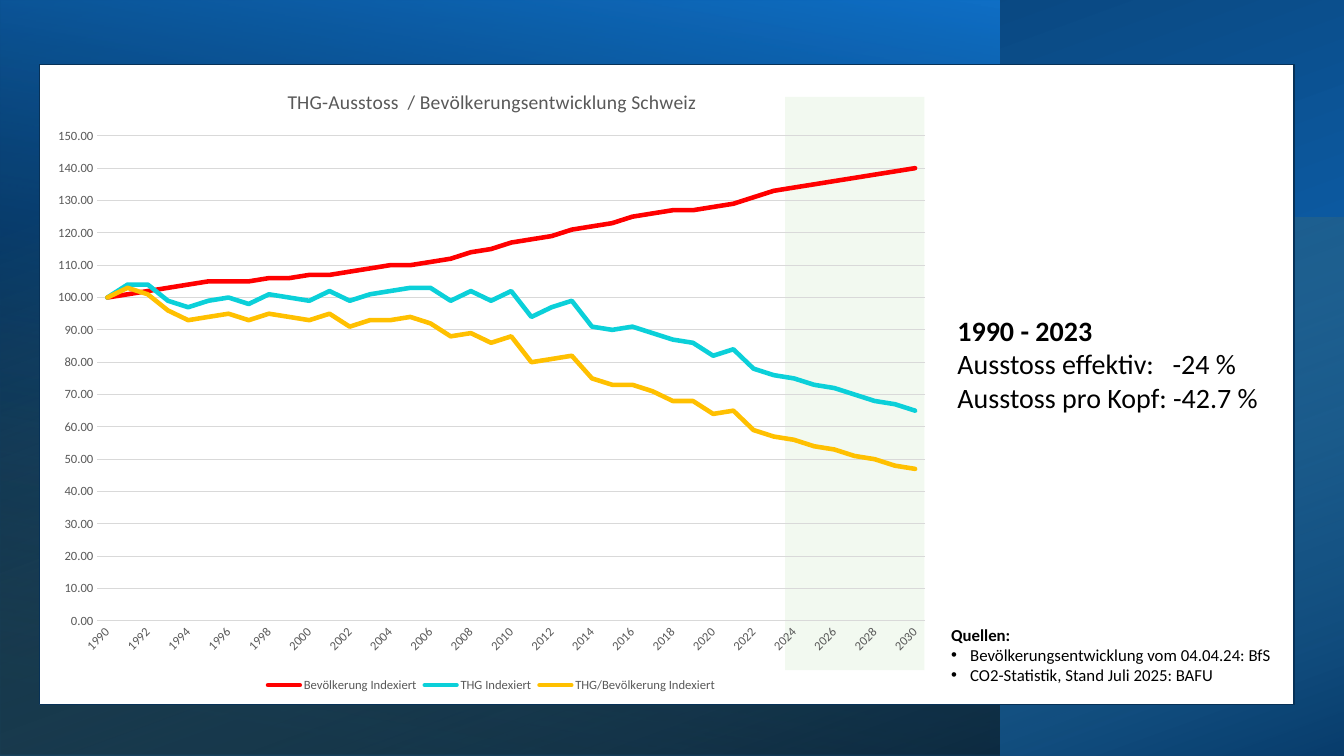
import lxml.etree
import pptx
import pptx.chart.data
import pptx.dml.color
import pptx.enum.chart
import pptx.enum.shapes
import pptx.enum.text
import pptx.oxml.ns
import pptx.util

Cm = pptx.util.Cm
Pt = pptx.util.Pt
qn = pptx.oxml.ns.qn
COLORS = {
    "blue": "0F6FC6", "navy": "083763", "black": "000000", "mint": "B0DFA1",
    "white": "FFFFFF", "edge": "073157", "pale": "E5F4E0", "grey": "595959",
    "grid": "D9D9D9", "red": "FF0000", "cyan": "0BD0D9", "gold": "FFC000",
}
YEARS = [str(year) for year in range(1990, 2031)]
SERIES = [
    ("Bevölkerung Indexiert", "red",
     [100, 101, 102, 103, 104, 105, 105, 105, 106, 106, 107, 107, 108, 109,
      110, 110, 111, 112, 114, 115, 117, 118, 119, 121, 122, 123, 125, 126,
      127, 127, 128, 129, 131, 133, 134, 135, 136, 137, 138, 139, 140]),
    ("THG Indexiert", "cyan",
     [100, 104, 104, 99, 97, 99, 100, 98, 101, 100, 99, 102, 99, 101,
      102, 103, 103, 99, 102, 99, 102, 94, 97, 99, 91, 90, 91, 89,
      87, 86, 82, 84, 78, 76, 75, 73, 72, 70, 68, 67, 65]),
    ("THG/Bevölkerung Indexiert", "gold",
     [100, 103, 101, 96, 93, 94, 95, 93, 95, 94, 93, 95, 91, 93,
      93, 94, 92, 88, 89, 86, 88, 80, 81, 82, 75, 73, 73, 71,
      68, 68, 64, 65, 59, 57, 56, 54, 53, 51, 50, 48, 47]),
]


def shade(name):
    """Return the named colour."""
    return pptx.dml.color.RGBColor.from_string(COLORS[name])


def style(font, size, color="black", bold=False):
    """Format a font."""
    font.name = "Calibri"
    font.size = Pt(size)
    font.bold = bold
    font.color.rgb = shade(color)


def write(par, text, bullet=False, tab=None, **form):
    """Write formatted text into a paragraph."""
    props = par._p.get_or_add_pPr()
    if bullet:
        props.set("marL", str(Cm(0.48)))
        props.set("indent", str(-Cm(0.48)))
        lxml.etree.SubElement(props, qn("a:buFont")).set("typeface", "Arial")
        lxml.etree.SubElement(props, qn("a:buChar")).set("char", "•")
    if tab:
        stops = lxml.etree.SubElement(props, qn("a:tabLst"))
        stop = lxml.etree.SubElement(stops, qn("a:tab"))
        stop.set("pos", str(Cm(tab)))
        stop.set("algn", "l")
    run = par.add_run()
    run.text = text
    style(run.font, **form)


def fade(node, alpha):
    """Set the opacity of a colour node in percent."""
    color = node.find(qn("a:srgbClr"))
    lxml.etree.SubElement(color, qn("a:alpha")).set("val", str(alpha * 1000))


def clear(part):
    """Return shape properties without fill and line."""
    props = part.makeelement(qn("c:spPr"), {})
    lxml.etree.SubElement(props, qn("a:noFill"))
    line = lxml.etree.SubElement(props, qn("a:ln"))
    lxml.etree.SubElement(line, qn("a:noFill"))
    return props


def place(part, inner=False, **spots):
    """Give a chart part a fixed layout in fractions of the chart."""
    for old in part.findall(qn("c:layout")):
        part.remove(old)
    layout = part.makeelement(qn("c:layout"), {})
    text = part.find(qn("c:tx"))
    if text is None:
        part.insert(0, layout)
    else:
        text.addnext(layout)
    manual = lxml.etree.SubElement(layout, qn("c:manualLayout"))
    items = {"layoutTarget": "inner"} if inner else {}
    items.update(xMode="edge", yMode="edge", **spots)
    for key, value in items.items():
        lxml.etree.SubElement(manual, qn("c:" + key)).set("val", str(value))


class Deck:
    """Hold the style and the current slide."""

    def __init__(self):
        """Start a deck with one blank slide."""
        self.file = pptx.Presentation()
        self.file.slide_width = Cm(33.87)
        self.file.slide_height = Cm(19.05)
        self.slide = self.file.slides.add_slide(self.file.slide_layouts[6])

    def rect(self, *box):
        """Add a plain rectangle without a line."""
        shape = self.slide.shapes.add_shape(
            pptx.enum.shapes.MSO_SHAPE.RECTANGLE, *map(Cm, box))
        shape.shadow.inherit = False
        shape.line.fill.background()
        return shape

    def blend(self, box, turn, angle, stops):
        """Add a mirrored rectangle with a gradient fill."""
        shape = self.rect(*box)
        shape.rotation = turn
        shape._element.spPr.find(qn("a:xfrm")).set("flipH", "1")
        shape.fill.gradient()
        shape.fill.gradient_angle = 360 - angle
        for stop, (spot, color, alpha) in zip(shape.fill.gradient_stops, stops):
            stop.position = spot
            stop.color.rgb = shade(color)
            if alpha < 100:
                fade(stop._gs, alpha)

    def panel(self, box, color, edge=None, alpha=100):
        """Add a rectangle with a flat fill."""
        shape = self.rect(*box)
        shape.fill.solid()
        shape.fill.fore_color.rgb = shade(color)
        if alpha < 100:
            fade(shape._element.spPr.find(qn("a:solidFill")), alpha)
        if edge:
            shape.line.color.rgb = shade(edge)
            shape.line.width = Pt(1)

    def note(self, box, size, lines):
        """Add a text box of formatted lines."""
        frame = self.slide.shapes.add_textbox(*map(Cm, box)).text_frame
        frame.word_wrap = False
        frame.auto_size = pptx.enum.text.MSO_AUTO_SIZE.SHAPE_TO_FIT_TEXT
        for index, (text, form) in enumerate(lines):
            par = frame.add_paragraph() if index else frame.paragraphs[0]
            write(par, text, size=size, **form)

    def graph(self, box, title):
        """Add the line chart."""
        data = pptx.chart.data.CategoryChartData(number_format="0.00")
        data.categories = YEARS
        for name, _, values in SERIES:
            data.add_series(name, values)
        chart = self.slide.shapes.add_chart(
            pptx.enum.chart.XL_CHART_TYPE.LINE, *map(Cm, box), data).chart
        style(chart.font, 10)
        root = chart._chartSpace.find(qn("c:chart"))
        root.addnext(clear(root))
        area = root.find(qn("c:plotArea"))
        area.append(clear(area))
        place(area, inner=True, x=0.063, y=0.116, w=0.918, h=0.765)

        chart.has_title = True
        write(chart.chart_title.text_frame.paragraphs[0], title,
              size=14, color="grey")
        place(chart.chart_title._element, x=0.27, y=0.035)
        chart.has_legend = True
        chart.legend.position = pptx.enum.chart.XL_LEGEND_POSITION.BOTTOM
        chart.legend.include_in_layout = False
        style(chart.legend.font, 9, "grey")

        chart.plots[0].vary_by_categories = False
        for line, (_, color, _) in zip(chart.plots[0].series, SERIES):
            line.smooth = False
            line.marker.style = pptx.enum.chart.XL_MARKER_STYLE.NONE
            line.format.line.color.rgb = shade(color)
            line.format.line.width = Pt(3.25)
            line.format.line._get_or_add_ln().set("cap", "rnd")
        self.axes(chart.category_axis, chart.value_axis)

    def axes(self, years, index):
        """Format both axes of the chart."""
        for axis in (years, index):
            axis.major_tick_mark = pptx.enum.chart.XL_TICK_MARK.NONE
            axis.minor_tick_mark = pptx.enum.chart.XL_TICK_MARK.NONE
            style(axis.tick_labels.font, 9, "grey")
        index.minimum_scale, index.maximum_scale = 0, 150
        index.major_unit = 10
        index.tick_labels.number_format = "0.00"
        index.tick_labels.number_format_is_linked = False
        index.format.line.fill.background()
        for line in (years.format.line, index.major_gridlines.format.line):
            line.color.rgb = shade("grid")
            line.width = Pt(0.75)
        node = years._element
        node.find(qn("c:txPr")).find(qn("a:bodyPr")).set("rot", "-2700000")
        skip = node.makeelement(qn("c:tickLblSkip"), {"val": "2"})
        node.find(qn("c:noMultiLvlLbl")).addprevious(skip)


def main():
    """Build the slide."""
    deck = Deck()
    deck.blend((7.41, -7.41, 19.05, 33.87), 270, 200,
               [(0.08, "blue", 100), (1, "navy", 100)])
    deck.blend((0, 0, 25.2, 19.05), 180, 80,
               [(0.08, "black", 52), (1, "blue", 100)])
    deck.blend((10.13, -4.67, 13.59, 33.88), 270, 20,
               [(0, "mint", 0), (1, "black", 46)])
    deck.panel((0.99, 1.63, 31.62, 16.13), "white", edge="edge")
    deck.note((23.88, 7.77, 8.15, 2.82), 20, [
        ("1990 - 2023", {"bold": True}),
        ("Ausstoss effektiv:\t-24 %", {"tab": 5.42}),
        ("Ausstoss pro Kopf: -42.7 %", {})])
    deck.panel((19.79, 2.44, 3.51, 14.45), "pale", alpha=47)
    deck.note((23.72, 15.62, 8.66, 1.8), 12, [
        ("Quellen:", {"bold": True}),
        ("Bevölkerungsentwicklung vom 04.04.24: BfS", {"bullet": True}),
        ("CO2-Statistik, Stand Juli 2025: BAFU", {"bullet": True})])
    deck.graph((1.02, 1.57, 22.73, 15.98),
               "THG-Ausstoss  / Bevölkerungsentwicklung Schweiz")
    deck.file.save("out.pptx")


if __name__ == "__main__":
    main()
